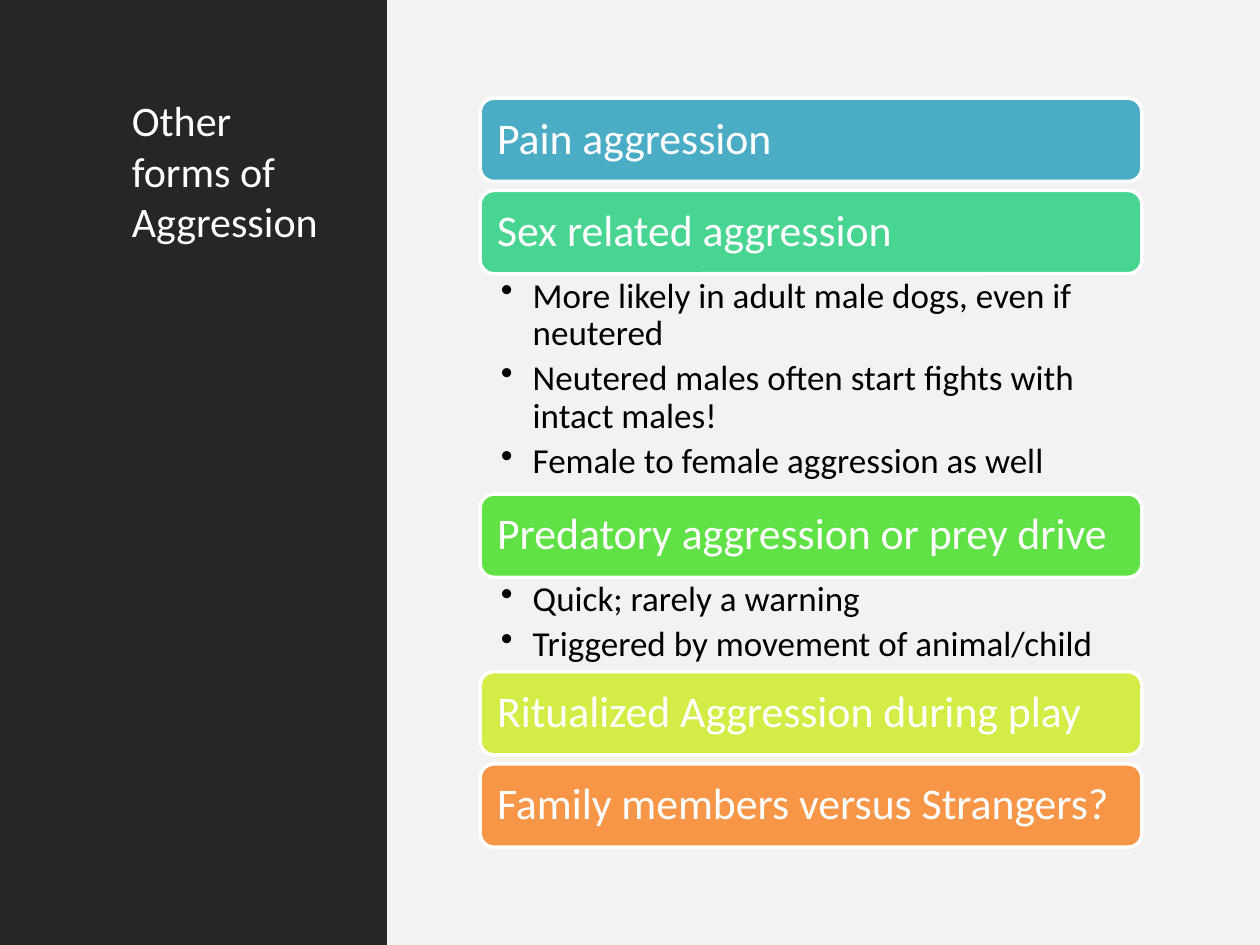
from dataclasses import dataclass

from pptx import Presentation
from pptx.dml.color import RGBColor
from pptx.enum.shapes import MSO_SHAPE as Preset
from pptx.enum.text import MSO_ANCHOR as Anchor, PP_ALIGN as Align
from pptx.oxml.ns import qn
from pptx.slide import Slide
from pptx.text.text import TextFrame, _Paragraph as Paragraph
from pptx.util import Cm, Pt
from lxml.etree import SubElement

WHITE = RGBColor(0xFF, 0xFF, 0xFF)
BLACK = RGBColor(0x00, 0x00, 0x00)
PALE_GREY = RGBColor(0xF2, 0xF2, 0xF2)
CHARCOAL = RGBColor(0x26, 0x26, 0x26)
BLUE = RGBColor(0x4B, 0xAC, 0xC6)
TEAL = RGBColor(0x48, 0xD4, 0x91)
GREEN = RGBColor(0x60, 0xE1, 0x46)
LIME = RGBColor(0xD5, 0xEC, 0x46)
ORANGE = RGBColor(0xF7, 0x96, 0x46)

FONT = "Calibri"
PAGE_WIDTH, PAGE_HEIGHT = Cm(25.4), Cm(19.05)
SIDEBAR_WIDTH = Cm(7.8)
LIST_LEFT, LIST_TOP, LIST_WIDTH = Cm(9.68), Cm(1.98), Cm(13.34)
BAR_HEIGHT, BAR_GAP = Cm(1.68), Cm(0.18)
BULLET_INDENT = Cm(0.64)


@dataclass(frozen=True)
class Topic:
    heading: str
    color: RGBColor
    points: tuple[str, ...] = ()
    points_height: Cm = BAR_GAP


TOPICS = (
    Topic("Pain aggression", BLUE),
    Topic(
        "Sex related aggression",
        TEAL,
        (
            "More likely in adult male dogs, even if neutered",
            "Neutered males often start fights with intact males!",
            "Female to female aggression as well",
        ),
        Cm(4.44),
    ),
    Topic(
        "Predatory aggression or prey drive",
        GREEN,
        ("Quick; rarely a warning", "Triggered by movement of animal/child"),
        Cm(1.9),
    ),
    Topic("Ritualized Aggression during play", LIME),
    Topic("Family members versus Strangers?", ORANGE),
)


def set_margins(frame: TextFrame, left: Cm, top: Cm, right: Cm) -> None:
    frame.word_wrap = True
    frame.margin_left, frame.margin_right = left, right
    frame.margin_top = frame.margin_bottom = top


def style(para: Paragraph, size: int, color: RGBColor) -> None:
    para.alignment = Align.LEFT
    para.font.name = FONT
    para.font.size = Pt(size)
    para.font.color.rgb = color


def add_panel(page: Slide, left: Cm, width: Cm, color: RGBColor) -> None:
    panel = page.shapes.add_shape(Preset.RECTANGLE, left, 0, width, PAGE_HEIGHT)
    panel.shadow.inherit = False
    panel.fill.solid()
    panel.fill.fore_color.rgb = color
    panel.line.fill.background()


def add_title(page: Slide, text: str) -> None:
    box = page.shapes.add_textbox(Cm(2.41), Cm(1.78), Cm(4.57), Cm(15.49))
    set_margins(box.text_frame, Cm(0.25), Cm(0.13), Cm(0.25))
    para = box.text_frame.paragraphs[0]
    para.text = text
    style(para, 24, WHITE)


def add_bar(page: Slide, topic: Topic, top: Cm) -> None:
    bar = page.shapes.add_shape(
        Preset.ROUNDED_RECTANGLE, LIST_LEFT, top, LIST_WIDTH, BAR_HEIGHT
    )
    bar.shadow.inherit = False
    bar.fill.solid()
    bar.fill.fore_color.rgb = topic.color
    bar.line.color.rgb = WHITE
    bar.line.width = Pt(2)
    frame = bar.text_frame
    set_margins(frame, Cm(0.26), Cm(0.25), Cm(0.26))
    frame.vertical_anchor = Anchor.MIDDLE
    para = frame.paragraphs[0]
    para.text = topic.heading
    para.line_spacing = 0.9
    style(para, 25, WHITE)


def add_points(page: Slide, topic: Topic, top: Cm) -> None:
    box = page.shapes.add_textbox(LIST_LEFT, top, LIST_WIDTH, topic.points_height)
    frame = box.text_frame
    set_margins(frame, Cm(0.42), Cm(0.08), Cm(0.47))
    frame.text = "\n".join(topic.points)
    for para in frame.paragraphs:
        properties = para._p.get_or_add_pPr()
        properties.set("marL", str(BULLET_INDENT))
        properties.set("indent", str(-BULLET_INDENT))
        SubElement(properties, qn("a:buChar")).set("char", "•")
        para.level = 1
        para.line_spacing = 0.9
        para.space_after = Pt(4)
        style(para, 20, BLACK)


def main() -> None:
    deck = Presentation()
    deck.slide_width, deck.slide_height = PAGE_WIDTH, PAGE_HEIGHT
    page = deck.slides.add_slide(deck.slide_layouts[6])
    add_panel(page, SIDEBAR_WIDTH, PAGE_WIDTH - SIDEBAR_WIDTH, PALE_GREY)
    add_panel(page, 0, SIDEBAR_WIDTH, CHARCOAL)
    add_title(page, "Other forms of Aggression")
    top = LIST_TOP
    for topic in TOPICS:
        add_bar(page, topic, top)
        top += BAR_HEIGHT
        if topic.points:
            add_points(page, topic, top)
        top += topic.points_height
    deck.save("out.pptx")


if __name__ == "__main__":
    main()
